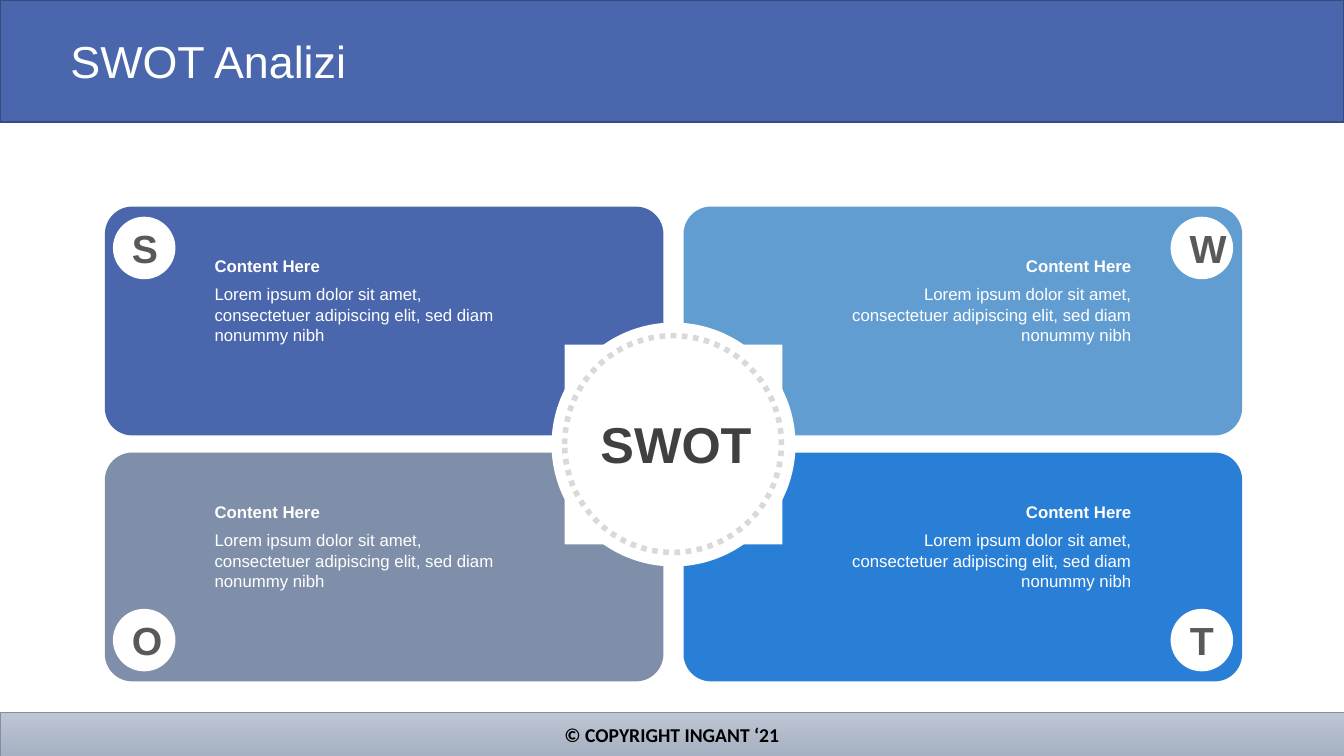
"""Build a SWOT analysis slide with four quadrants around a central badge."""
import dataclasses

import pptx
import pptx.dml.color
import pptx.enum.dml
import pptx.enum.shapes
import pptx.enum.text
import pptx.util

Inches = pptx.util.Inches
Pt = pptx.util.Pt
Shape = pptx.enum.shapes.MSO_SHAPE
Align = pptx.enum.text.PP_ALIGN
Anchor = pptx.enum.text.MSO_ANCHOR


@dataclasses.dataclass(frozen=True)
class Theme:
    """Colours, fonts and type sizes of the slide."""
    white: str = "FFFFFF"
    black: str = "000000"
    blue: str = "4A66AC"
    blue_edge: str = "374B7F"
    sky: str = "629DD1"
    slate: str = "7F8FA9"
    azure: str = "297FD5"
    footer_top: str = "BEC5D2"
    footer_bottom: str = "A6B1C3"
    dots: str = "D9D9D9"
    letter: str = "595959"
    badge: str = "404040"
    font: str = "Arial"
    footer_font: str = "Calibri"
    title_size: int = 32
    badge_size: int = 36
    letter_size: int = 28
    body_size: int = 12
    footer_size: int = 14


THEME = Theme()
HEADING = "Content Here"
BODY = "Lorem ipsum dolor sit amet, consectetuer adipiscing elit, sed diam nonummy nibh"
COLUMNS = (
    {"panel": 1.04, "letter": 1.12, "caption": 2.03, "align": Align.LEFT},
    {"panel": 6.78, "letter": 11.61, "caption": 8.09, "align": Align.RIGHT},
)
ROWS = (
    {"panel": 2.05, "letter": 2.15, "caption": 2.49},
    {"panel": 4.49, "letter": 6.04, "caption": 4.93},
)
QUADRANTS = (
    ("S", THEME.blue, COLUMNS[0], ROWS[0]),
    ("W", THEME.sky, COLUMNS[1], ROWS[0]),
    ("O", THEME.slate, COLUMNS[0], ROWS[1]),
    ("T", THEME.azure, COLUMNS[1], ROWS[1]),
)


def rgb(value):
    """Return a colour object for a hex value."""
    return pptx.dml.color.RGBColor.from_string(value)


def add_figure(shapes, kind, box, fill=None, line=None, width=1):
    """Add a preset shape with an optional solid fill and outline."""
    shape = shapes.add_shape(kind, *map(Inches, box))
    shape.shadow.inherit = False
    if fill:
        shape.fill.solid()
        shape.fill.fore_color.rgb = rgb(fill)
    else:
        shape.fill.background()
    if line:
        shape.line.color.rgb = rgb(line)
        shape.line.width = Pt(width)
    else:
        shape.line.fill.background()
    return shape


def write(shape, text, size, color, bold=False, align=Align.LEFT,
          anchor=Anchor.TOP, font=THEME.font):
    """Put one formatted paragraph in a shape and return it."""
    frame = shape.text_frame
    frame.text = text
    frame.word_wrap = True
    frame.vertical_anchor = anchor
    paragraph = frame.paragraphs[0]
    paragraph.alignment = align
    for run in paragraph.runs:
        run.font.name = font
        run.font.size = Pt(size)
        run.font.bold = bold
        run.font.color.rgb = rgb(color)
    return paragraph


def add_label(shapes, box, text, size, color, **style):
    """Add a text box that grows with its text."""
    label = shapes.add_textbox(*map(Inches, box))
    write(label, text, size, color, **style)
    label.text_frame.auto_size = pptx.enum.text.MSO_AUTO_SIZE.SHAPE_TO_FIT_TEXT


def add_header(shapes):
    """Add the title band and the title."""
    add_figure(shapes, Shape.RECTANGLE, (0, 0, 13.33, 1.21), THEME.blue, THEME.blue_edge)
    title = shapes.add_textbox(*map(Inches, (0.6, 0.24, 12.41, 0.79)))
    paragraph = write(title, "SWOT Analizi", THEME.title_size, THEME.white,
                      anchor=Anchor.MIDDLE)
    paragraph.line_spacing = 0.9


def add_footer(shapes):
    """Add the gradient copyright band."""
    footer = add_figure(shapes, Shape.RECTANGLE, (0, 7.07, 13.33, 0.43),
                        line=THEME.slate, width=0.5)
    footer.fill.gradient()
    footer.fill.gradient_angle = 270
    colors = (THEME.footer_top, THEME.footer_bottom)
    for position, (stop, color) in enumerate(zip(footer.fill.gradient_stops, colors)):
        stop.color.rgb = rgb(color)
        stop.position = position
    write(footer, "© COPYRIGHT INGANT ‘21", THEME.footer_size, THEME.black, bold=True,
          align=Align.CENTER, anchor=Anchor.MIDDLE, font=THEME.footer_font)


def add_panel(shapes, color, column, row):
    """Add the rounded background of one quadrant."""
    panel = add_figure(shapes, Shape.ROUNDED_RECTANGLE,
                       (column["panel"], row["panel"], 5.54, 2.27), color)
    panel.adjustments[0] = 0.12


def add_center(shapes):
    """Add the white centre with its dotted ring."""
    group = shapes.add_group_shape().shapes
    add_figure(group, Shape.RECTANGLE, (5.6, 3.42, 2.16, 1.98), THEME.white)
    add_figure(group, Shape.OVAL, (5.47, 3.2, 2.42, 2.42), THEME.white)
    ring = add_figure(group, Shape.OVAL, (5.6, 3.33, 2.15, 2.15), line=THEME.dots, width=4)
    ring.line.dash_style = pptx.enum.dml.MSO_LINE.ROUND_DOT


def add_letter(shapes, letter, column, row):
    """Add the lettered circle of one quadrant."""
    circle = add_figure(shapes, Shape.OVAL,
                        (column["letter"], row["letter"], 0.62, 0.62), THEME.white)
    write(circle, letter, THEME.letter_size, THEME.letter, bold=True,
          align=Align.CENTER, anchor=Anchor.MIDDLE)


def add_caption(shapes, column, row):
    """Add the heading and body text of one quadrant."""
    group = shapes.add_group_shape().shapes
    left, top = column["caption"], row["caption"]
    add_label(group, (left, top, 3.23, 0.3), HEADING, THEME.body_size, THEME.white,
              bold=True, align=column["align"])
    add_label(group, (left, top + 0.28, 3.23, 0.71), BODY, THEME.body_size, THEME.white,
              align=column["align"])


def main():
    """Build and save the slide."""
    presentation = pptx.Presentation()
    presentation.slide_width = Inches(13.33)
    presentation.slide_height = Inches(7.5)
    slide = presentation.slides.add_slide(presentation.slide_layouts[6])
    shapes = slide.shapes
    add_header(shapes)
    add_footer(shapes)
    for _, color, column, row in QUADRANTS:
        add_panel(shapes, color, column, row)
    add_center(shapes)
    for letter, _, column, row in QUADRANTS:
        add_letter(shapes, letter, column, row)
        add_caption(shapes, column, row)
    add_label(shapes, (5.76, 4.05, 1.89, 0.71), "SWOT", THEME.badge_size, THEME.badge,
              bold=True, align=Align.CENTER)
    presentation.save("out.pptx")


if __name__ == "__main__":
    main()
